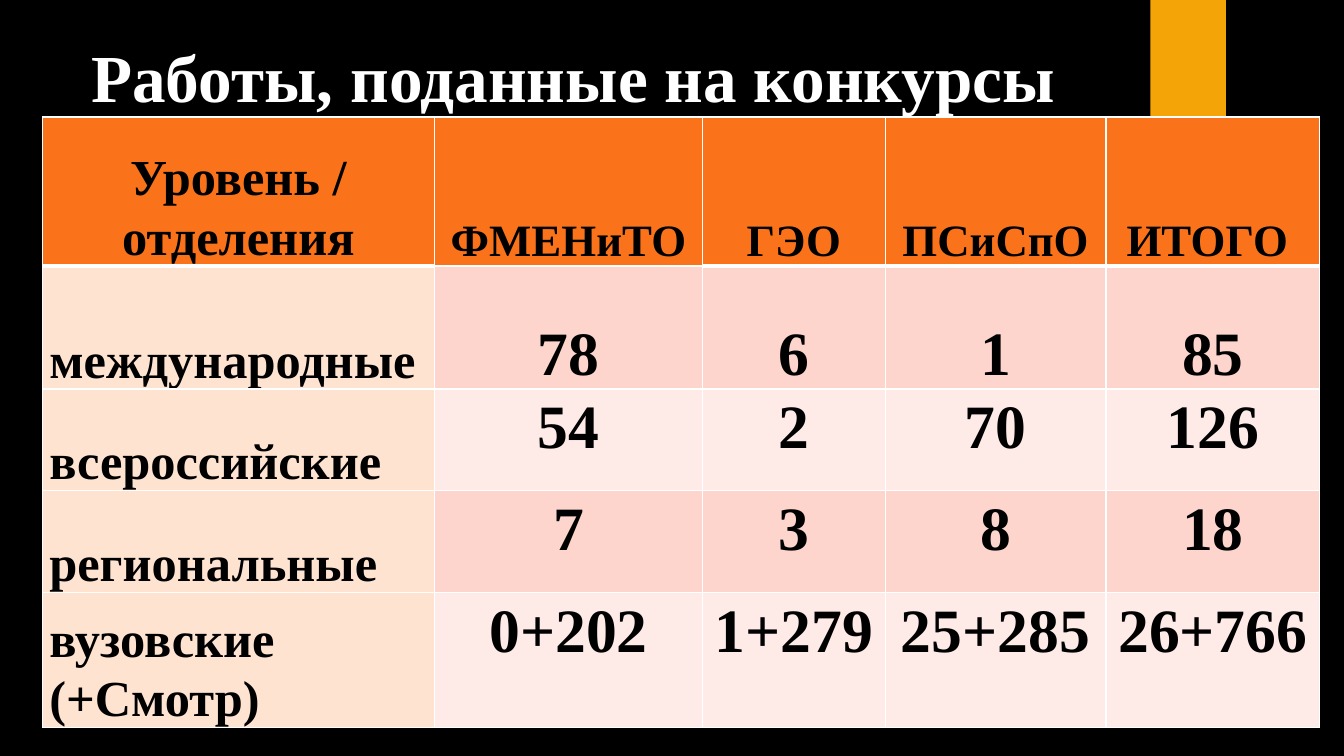
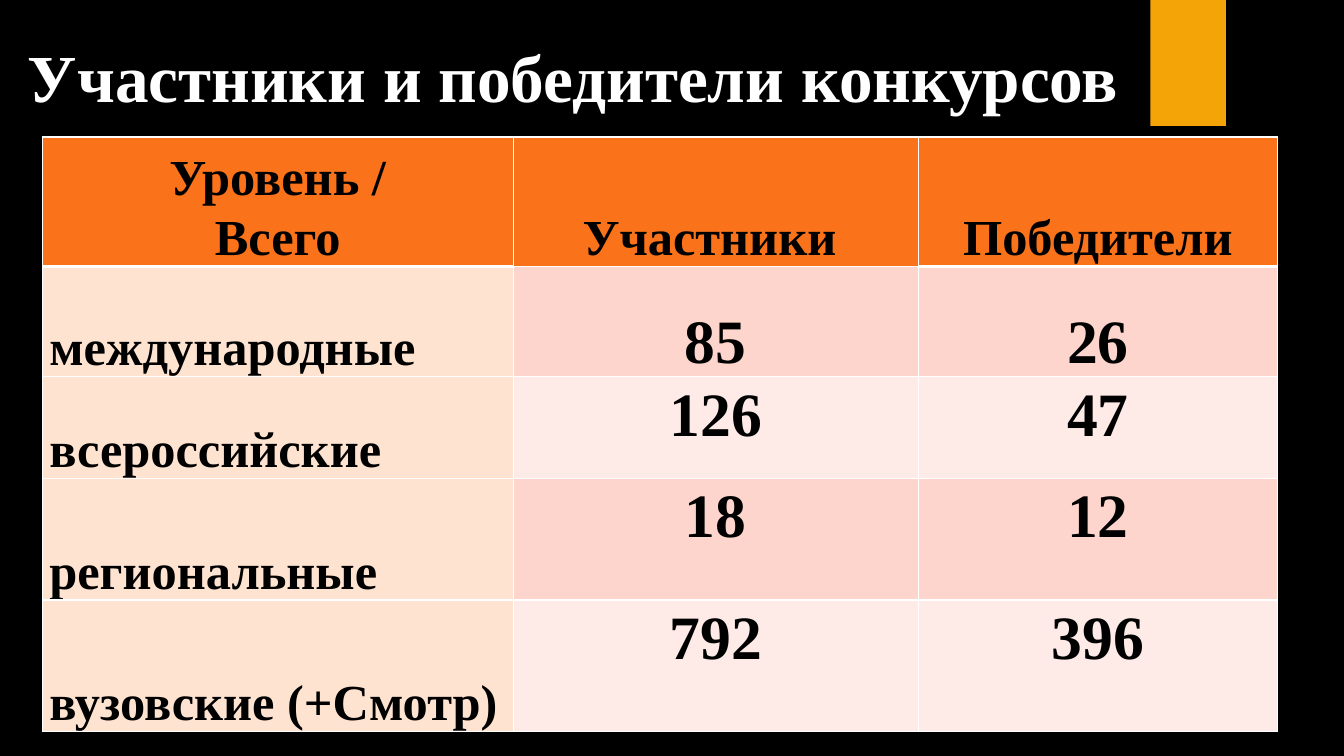
"""Build two slides with tables of student contest results."""
from lxml.etree import SubElement
from pptx import Presentation
from pptx.dml.color import RGBColor
from pptx.enum.shapes import MSO_SHAPE
from pptx.enum.text import MSO_ANCHOR, PP_ALIGN
from pptx.oxml.ns import qn
from pptx.util import Inches, Pt

COLORS = {
    "background": "000000",
    "title": "FFFFFF",
    "ribbon": "F5A408",
    "header": "FA731A",
    "level": "FEE3D1",
    "odd": "FDD5CD",
    "even": "FEEBE8",
    "ink": "000000",
    "border": "FFFFFF",
}
FONT = "Times New Roman"
LEVELS = ["международные", "всероссийские", "региональные", "вузовские (+Смотр)"]
TABLE_LEFT = 0.42


def paint(fill, color):
    """Give a fill one solid colour."""
    fill.solid()
    fill.fore_color.rgb = RGBColor.from_string(COLORS[color])


def write_text(frame, text, size, color="ink", align=PP_ALIGN.CENTER, spacing=1.0):
    """Write bold text, one paragraph for each line."""
    frame.word_wrap = True
    for index, line in enumerate(text.split("\n")):
        paragraph = frame.add_paragraph() if index else frame.paragraphs[0]
        paragraph.alignment = align
        paragraph.line_spacing = spacing
        run = paragraph.add_run()
        run.text = line
        run.font.name = FONT
        run.font.size = Pt(size)
        run.font.bold = True
        run.font.color.rgb = RGBColor.from_string(COLORS[color])


def add_title(slide, text):
    """Add the title line at the top."""
    title = slide.shapes.add_textbox(Inches(0.17), Inches(0.21), Inches(11.2), Inches(1.15))
    title.text_frame.margin_top = Inches(0.14)
    write_text(title.text_frame, text, size=48, color="title")


def add_ribbon(slide):
    """Add the amber ribbon hanging from the top edge."""
    ribbon = slide.shapes.add_shape(
        MSO_SHAPE.RECTANGLE, Inches(11.41), 0, Inches(0.75), Inches(1.25))
    ribbon.shadow.inherit = False
    paint(ribbon.fill, "ribbon")
    ribbon.line.fill.background()


def set_borders(cell, top, bottom):
    """Draw the four cell borders with the given top and bottom widths."""
    properties = cell._tc.get_or_add_tcPr()
    for index, (side, width) in enumerate(zip("LRTB", (1, 1, top, bottom))):
        border = SubElement(properties, qn(f"a:ln{side}"), w=str(Pt(width)))
        solid = SubElement(border, qn("a:solidFill"))
        SubElement(solid, qn("a:srgbClr"), val=COLORS["border"])
        properties.insert(index, border)


def format_cell(cell, text, row, column, header_size):
    """Fill and write one cell according to its place in the table."""
    cell.margin_left = cell.margin_right = Inches(0.07)
    cell.margin_top = cell.margin_bottom = 0
    top_aligned = row > 1 and column > 0
    cell.vertical_anchor = MSO_ANCHOR.TOP if top_aligned else MSO_ANCHOR.BOTTOM
    align, size = PP_ALIGN.CENTER, 44
    if row == 0:
        fill, size = "header", header_size if column else 36
    elif column == 0:
        fill, size, align = "level", 36, PP_ALIGN.LEFT
    else:
        fill = "odd" if row % 2 else "even"
    paint(cell.fill, fill)
    rule = 1 if column == 1 else 3
    set_borders(cell, top=rule if row == 1 else 1, bottom=rule if row == 0 else 1)
    write_text(cell.text_frame, text, size=size, align=align, spacing=1.07)


def add_results(slide, top, widths, heights, header, values, header_size):
    """Add a table with one row for each contest level."""
    rows = [header] + [[level, *counts] for level, counts in zip(LEVELS, values)]
    table = slide.shapes.add_table(
        len(rows), len(header), Inches(TABLE_LEFT), Inches(top),
        Inches(sum(widths)), Inches(sum(heights))).table
    table.first_row = table.horz_banding = False
    for column, width in zip(table.columns, widths):
        column.width = Inches(width)
    for row, height in zip(table.rows, heights):
        row.height = Inches(height)
    for row, texts in enumerate(rows):
        for column, text in enumerate(texts):
            format_cell(table.cell(row, column), text, row, column, header_size)


def add_results_slide(deck, title, **results):
    """Add a slide with ribbon, title and results table."""
    slide = deck.slides.add_slide(deck.slide_layouts[6])
    add_ribbon(slide)
    add_title(slide, title)
    add_results(slide, **results)


def main():
    """Build and save the deck."""
    deck = Presentation()
    deck.slide_width, deck.slide_height = Inches(13.33), Inches(7.5)
    paint(deck.slide_master.background.fill, "background")
    add_results_slide(
        deck, "Работы, поданные на конкурсы ",
        top=1.16,
        widths=[3.89, 2.66, 1.81, 2.19, 2.12],
        heights=[1.48, 1.22, 1.01, 1.01, 1.34],
        header=["Уровень /\nотделения", "ФМЕНиТО", "ГЭО", "ПСиСпО", "ИТОГО "],
        values=[
            ["78", "6", "1", "85"],
            ["54", "2", "70", "126"],
            ["7", "3", "8", "18"],
            ["0+202", "1+279", "25+285", "26+766"],
        ],
        header_size=32)
    add_results_slide(
        deck, "Участники и победители конкурсов ",
        top=1.36,
        widths=[4.67, 4.02, 3.56],
        heights=[1.19, 1.09, 1.01, 1.21, 1.3],
        header=["Уровень /\nВсего", "Участники ", "Победители"],
        values=[["85", "26"], ["126", "47"], ["18", "12"], ["792", "396"]],
        header_size=36)
    deck.save("out.pptx")


if __name__ == "__main__":
    main()
